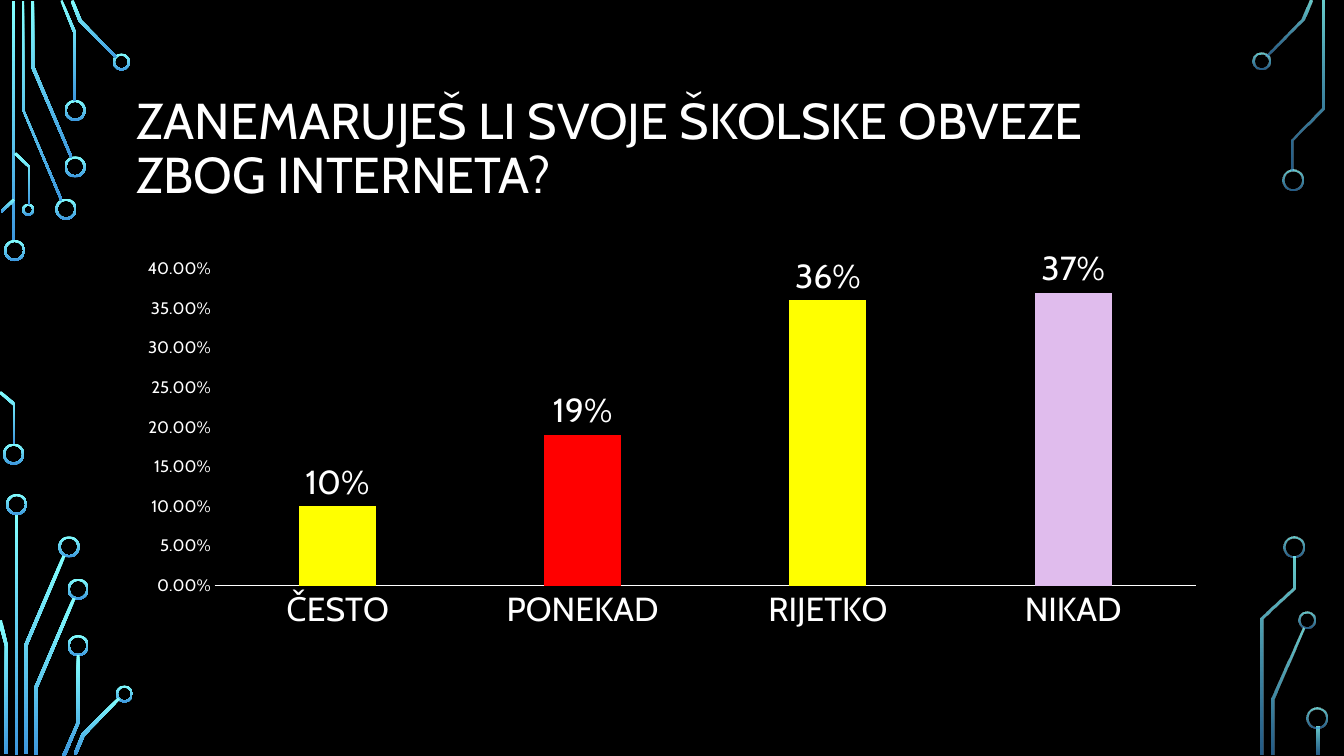
"""Build a survey slide: a column chart on black between circuit-board edges."""
from dataclasses import dataclass
from typing import Any

from lxml.etree import SubElement
from pptx import Presentation
from pptx.chart.data import CategoryChartData
from pptx.dml.color import RGBColor
from pptx.enum.chart import XL_CHART_TYPE, XL_LABEL_POSITION, XL_TICK_MARK
from pptx.enum.shapes import MSO_SHAPE
from pptx.enum.text import MSO_ANCHOR, MSO_AUTO_SIZE, PP_ALIGN
from pptx.oxml.ns import qn
from pptx.util import Emu, Pt

PX = 9144
FONT = "Cabin"
BLACK = RGBColor(0x00, 0x00, 0x00)
WHITE = RGBColor(0xFF, 0xFF, 0xFF)
YELLOW = RGBColor(0xFF, 0xFF, 0x00)
RED = RGBColor(0xFF, 0x00, 0x00)
LILAC = RGBColor(0xE0, 0xBC, 0xED)
CYAN = RGBColor(0x82, 0xFF, 0xFF)
BLUE = RGBColor(0x3D, 0x97, 0xDE)
RING_WIDTH = 2


@dataclass(frozen=True)
class Ring:
    left: int
    top: int
    size: int = 21


@dataclass(frozen=True)
class Bar:
    left: int
    top: int
    height: int
    width: int = 3


@dataclass(frozen=True)
class Trace:
    outline: tuple[tuple[int, int], ...]


@dataclass(frozen=True)
class Circuit:
    opacity: tuple[int, int]
    bars: tuple[Bar, ...]
    rings: tuple[Ring, ...]
    traces: tuple[Trace, ...]


@dataclass(frozen=True)
class Answer:
    label: str
    share: float
    color: RGBColor


LEFT_CIRCUIT = Circuit(
    (100, 100),
    (Bar(12, 1, 239), Bar(15, 510, 239)),
    (
        Ring(4, 238), Ring(3, 440), Ring(55, 197), Ring(64, 155), Ring(64, 99),
        Ring(112, 53, 17), Ring(22, 202, 12), Ring(6, 490), Ring(58, 532),
        Ring(67, 574), Ring(67, 630), Ring(115, 680, 17),
    ),
    (
        Trace(((60, 199), (22, 109), (22, 1), (24, 1), (24, 109), (62, 198))),
        Trace(((70, 157), (31, 67), (31, 1), (34, 1), (34, 66), (72, 156))),
        Trace(((76, 100), (73, 100), (73, 33), (60, 1), (62, 0), (76, 33))),
        Trace(((115, 58), (78, 21), (70, 1), (73, 0), (81, 20), (116, 56))),
        Trace(((2, 211), (1, 209), (13, 197), (15, 199))),
        Trace(((15, 441), (13, 441), (13, 402), (-1, 390), (1, 388), (15, 400))),
        Trace(((30, 203), (28, 203), (28, 166), (14, 153), (16, 151), (30, 165))),
        Trace(((27, 748), (24, 748), (24, 640), (62, 551), (65, 552), (27, 641))),
        Trace(((8, 748), (5, 748), (5, 641), (-2, 616), (2, 615), (8, 641))),
        Trace(((37, 749), (34, 749), (34, 682), (72, 593), (75, 594), (37, 683))),
        Trace(((65, 750), (62, 749), (76, 717), (76, 650), (79, 650), (79, 717))),
        Trace(((76, 749), (73, 748), (81, 728), (117, 692), (119, 694), (84, 730))),
    ),
)
RIGHT_CIRCUIT = Circuit(
    (80, 60),
    (Bar(1306, 721, 28),),
    (
        Ring(1243, 52, 17), Ring(1272, 168), Ring(1288, 607, 17),
        Ring(1273, 532), Ring(1296, 702),
    ),
    (
        Trace(((1258, 56), (1256, 55), (1291, 19), (1299, 0), (1302, 1), (1294, 20))),
        Trace(((1264, 749), (1261, 749), (1261, 693), (1292, 623), (1294, 624),
               (1264, 694))),
        Trace(((1283, 169), (1281, 169), (1281, 138), (1311, 107), (1311, 1),
               (1314, 1), (1314, 108), (1283, 139))),
        Trace(((1254, 749), (1251, 749), (1251, 613), (1282, 583), (1282, 552),
               (1285, 552), (1285, 584), (1254, 614))),
    ),
)
ANSWERS = (
    Answer("ČESTO", 0.1, YELLOW),
    Answer("PONEKAD", 0.19, RED),
    Answer("RIJETKO", 0.36, YELLOW),
    Answer("NIKAD", 0.37, LILAC),
)


def px(length: int) -> Emu:
    return Emu(length * PX)


def apply(target: Any, **formats: Any) -> None:
    for name, value in formats.items():
        setattr(target, name, value)


def style_font(font: Any, size: int) -> None:
    apply(font, name=FONT, size=Pt(size), bold=False)
    font.color.rgb = WHITE


def glow(shape: Any, opacity: tuple[int, int]) -> None:
    shape.shadow.inherit = False
    shape.line.fill.background()
    shape.fill.gradient()
    shape.fill.gradient_angle = 270
    for stop, color in zip(shape.fill.gradient_stops, (CYAN, BLUE)):
        stop.color.rgb = color
    for color, percent in zip(shape.element.xpath(".//a:gs/a:srgbClr"), opacity):
        if percent < 100:
            SubElement(color, qn("a:alpha")).set("val", str(percent * 1000))


def draw_circuit(page: Any, circuit: Circuit) -> None:
    for bar in circuit.bars:
        box = page.shapes.add_shape(MSO_SHAPE.RECTANGLE, px(bar.left), px(bar.top),
                                    px(bar.width), px(bar.height))
        glow(box, circuit.opacity)
    for ring in circuit.rings:
        donut = page.shapes.add_shape(MSO_SHAPE.DONUT, px(ring.left), px(ring.top),
                                      px(ring.size), px(ring.size))
        donut.adjustments[0] = RING_WIDTH / ring.size
        glow(donut, circuit.opacity)
    for trace in circuit.traces:
        builder = page.shapes.build_freeform(*trace.outline[0], scale=PX)
        builder.add_line_segments(trace.outline[1:], close=True)
        glow(builder.convert_to_shape(), circuit.opacity)


def draw_title(page: Any, text: str) -> None:
    title = page.shapes.title
    apply(title, left=px(125), top=px(68), width=px(1083), height=px(162))
    frame = title.text_frame
    frame.text = text
    apply(frame, word_wrap=True, auto_size=MSO_AUTO_SIZE.NONE,
          vertical_anchor=MSO_ANCHOR.MIDDLE)
    para = frame.paragraphs[0]
    apply(para, alignment=PP_ALIGN.LEFT, line_spacing=0.9)
    style_font(para.runs[0].font, 36)


def draw_chart(page: Any) -> None:
    data = CategoryChartData(number_format="0%")
    data.categories = [answer.label for answer in ANSWERS]
    data.add_series("Series 1", [answer.share for answer in ANSWERS])
    chart = page.shapes.add_chart(XL_CHART_TYPE.COLUMN_CLUSTERED, px(125), px(246),
                                  px(1083), px(387), data).chart
    apply(chart, has_title=False, has_legend=False)
    style_font(chart.font, 10)
    for axis, size in ((chart.category_axis, 24), (chart.value_axis, 12)):
        apply(axis, major_tick_mark=XL_TICK_MARK.NONE,
              minor_tick_mark=XL_TICK_MARK.NONE, has_major_gridlines=False)
        style_font(axis.tick_labels.font, size)
    baseline = chart.category_axis.format.line
    baseline.width = Pt(0.75)
    baseline.color.rgb = WHITE
    apply(chart.value_axis, minimum_scale=0, maximum_scale=0.4, major_unit=0.05)
    apply(chart.value_axis.tick_labels, number_format="0.00%",
          number_format_is_linked=False)
    chart.value_axis.format.line.fill.background()
    plot = chart.plots[0]
    apply(plot, gap_width=219, overlap=-27, vary_by_categories=False)
    series = plot.series[0]
    series.invert_if_negative = False
    series.format.fill.solid()
    series.format.fill.fore_color.rgb = YELLOW
    for index, answer in enumerate(ANSWERS):
        if answer.color != YELLOW:
            fill = series.points[index].format.fill
            fill.solid()
            fill.fore_color.rgb = answer.color
    labels = series.data_labels
    apply(labels, show_value=True, number_format="0%", number_format_is_linked=False,
          position=XL_LABEL_POSITION.OUTSIDE_END)
    style_font(labels.font, 24)


def main() -> None:
    deck = Presentation()
    apply(deck, slide_width=Emu(12192000), slide_height=Emu(6858000))
    page = deck.slides.add_slide(deck.slide_layouts.get_by_name("Title Only"))
    page.background.fill.solid()
    page.background.fill.fore_color.rgb = BLACK
    for circuit in (LEFT_CIRCUIT, RIGHT_CIRCUIT):
        draw_circuit(page, circuit)
    draw_title(page, "ZANEMARUJEŠ LI SVOJE ŠKOLSKE OBVEZE ZBOG INTERNETA?")
    draw_chart(page)
    deck.save("out.pptx")


if __name__ == "__main__":
    main()
